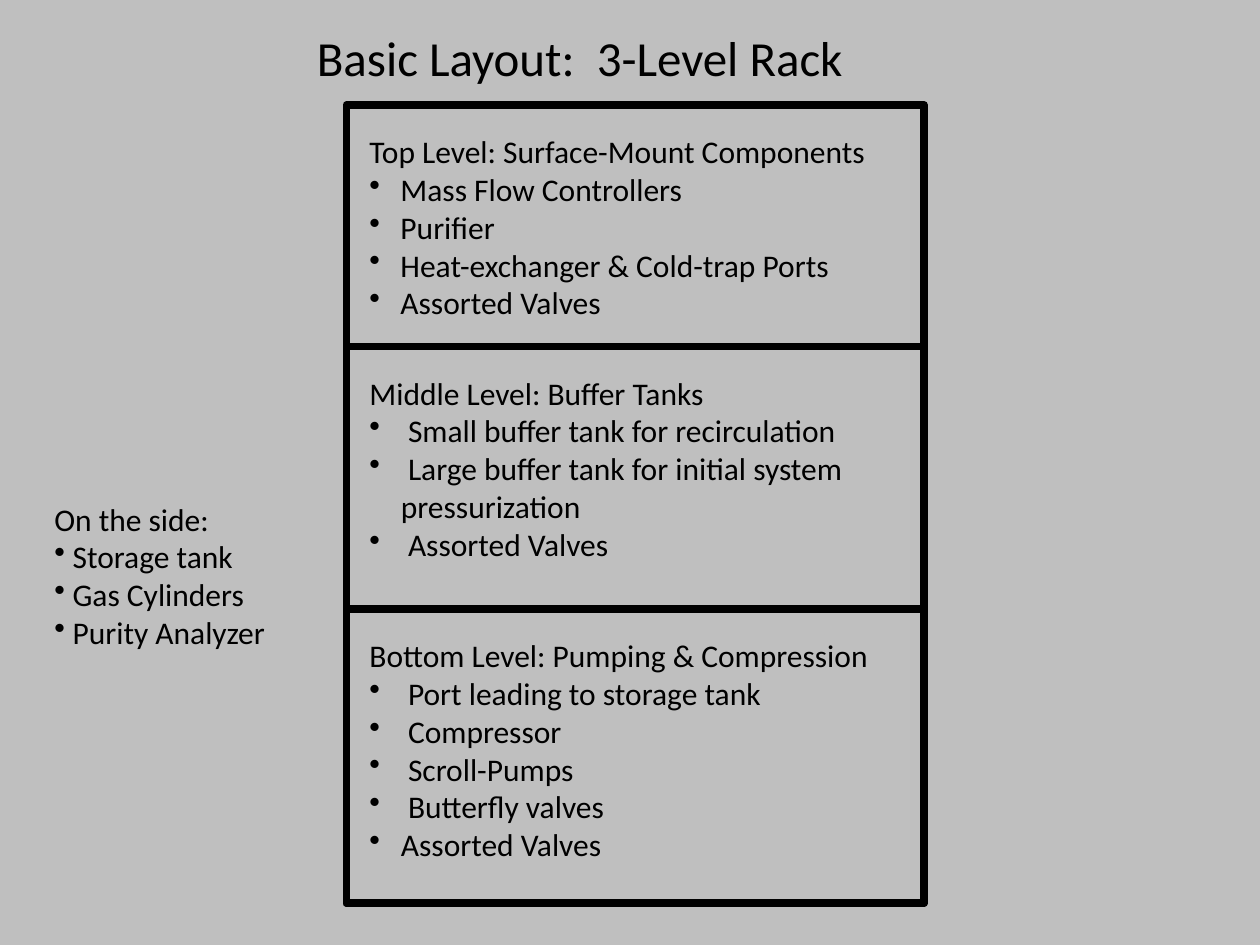
from pptx import Presentation
from pptx.dml.color import RGBColor
from pptx.enum.shapes import MSO_SHAPE as Shape
from pptx.enum.text import MSO_AUTO_SIZE as AutoSize
from pptx.oxml.ns import qn
from pptx.util import Inches, Pt
from lxml.etree import SubElement

COLORS = {"backdrop": "BFBFBF", "ink": "000000"}
FONT = "Calibri"
TITLE = "Basic Layout:  3-Level Rack"

# Each level: height in grid rows, text lines, hanging indent in inches, heading, items
LEVELS = [
    (23, 5, 0.19, "Top Level: Surface-Mount Components",
     [" Mass Flow Controllers", " Purifier",
      " Heat-exchanger & Cold-trap Ports", " Assorted Valves"]),
    (25, 5, 0.25, "Middle Level: Buffer Tanks",
     [" Small buffer tank for recirculation",
      " Large buffer tank for initial system pressurization",
      " Assorted Valves"]),
    (28, 6, 0.25, "Bottom Level: Pumping & Compression",
     [" Port leading to storage tank", " Compressor", " Scroll-Pumps",
      " Butterfly valves", "Assorted Valves"]),
]
SIDE_HEADING = "On the side:"
SIDE_ITEMS = [" Storage tank", " Gas Cylinders", " Purity Analyzer"]

# Grid of 120 columns by 90 rows, 12 to the inch
COLUMNS, ROWS = 120, 90
RACK_LEFT, RACK_TOP, RACK_WIDTH = 33, 10, 55
LINE_ROWS, PADDING_ROWS = 3.63, 1.2


def grid(*cells):
    return [Inches(cell / 12) for cell in cells]


def color(name):
    return RGBColor.from_string(COLORS[name])


def add_rectangle(shapes, cells, fill=None, outline=None):
    rectangle = shapes.add_shape(Shape.RECTANGLE, *grid(*cells))
    rectangle.shadow.inherit = False
    if fill:
        rectangle.fill.solid()
        rectangle.fill.fore_color.rgb = color(fill)
    else:
        rectangle.fill.background()
    if outline:
        rectangle.line.color.rgb = color(outline)
        rectangle.line.width = Pt(4.5)
    else:
        rectangle.line.fill.background()


def add_text(shapes, cells, heading, items=(), indent=0, size=18):
    """Add a heading followed by bulleted items with a hanging indent."""
    frame = shapes.add_textbox(*grid(*cells)).text_frame
    frame.word_wrap = True
    frame.auto_size = AutoSize.SHAPE_TO_FIT_TEXT
    for number, text in enumerate([heading, *items]):
        paragraph = frame.add_paragraph() if number else frame.paragraphs[0]
        if number:
            properties = paragraph._p.get_or_add_pPr()
            properties.set("marL", str(Inches(indent)))
            properties.set("indent", str(-Inches(indent)))
            SubElement(properties, qn("a:buChar"), char="•")
        run = paragraph.add_run()
        run.text = text
        run.font.name = FONT
        run.font.size = Pt(size)
        run.font.color.rgb = color("ink")


def text_rows(lines):
    return lines * LINE_ROWS + PADDING_ROWS


def add_rack(shapes):
    heights = [level[0] for level in LEVELS]
    tops = [RACK_TOP + sum(heights[:i]) for i in range(len(heights))]
    add_rectangle(shapes, (RACK_LEFT, RACK_TOP, RACK_WIDTH, sum(heights)), outline="ink")
    for top, height in reversed(list(zip(tops, heights))[1:]):
        add_rectangle(shapes, (RACK_LEFT, top, RACK_WIDTH, height), outline="ink")
    for top, (_, lines, indent, heading, items) in zip(tops, LEVELS):
        cells = (RACK_LEFT + 1, top + 2, RACK_WIDTH - 3, text_rows(lines))
        add_text(shapes, cells, heading, items, indent)


def main():
    deck = Presentation()
    deck.slide_width, deck.slide_height = grid(COLUMNS, ROWS)
    shapes = deck.slides.add_slide(deck.slide_layouts[6]).shapes
    add_rectangle(shapes, (0, 0, COLUMNS, ROWS), fill="backdrop")
    add_text(shapes, (29, 2, 60, 6.9), TITLE, size=28)
    add_rack(shapes.add_group_shape().shapes)
    add_text(shapes, (4, 47, 24, text_rows(4)), SIDE_HEADING, SIDE_ITEMS)
    deck.save("out.pptx")


if __name__ == "__main__":
    main()
